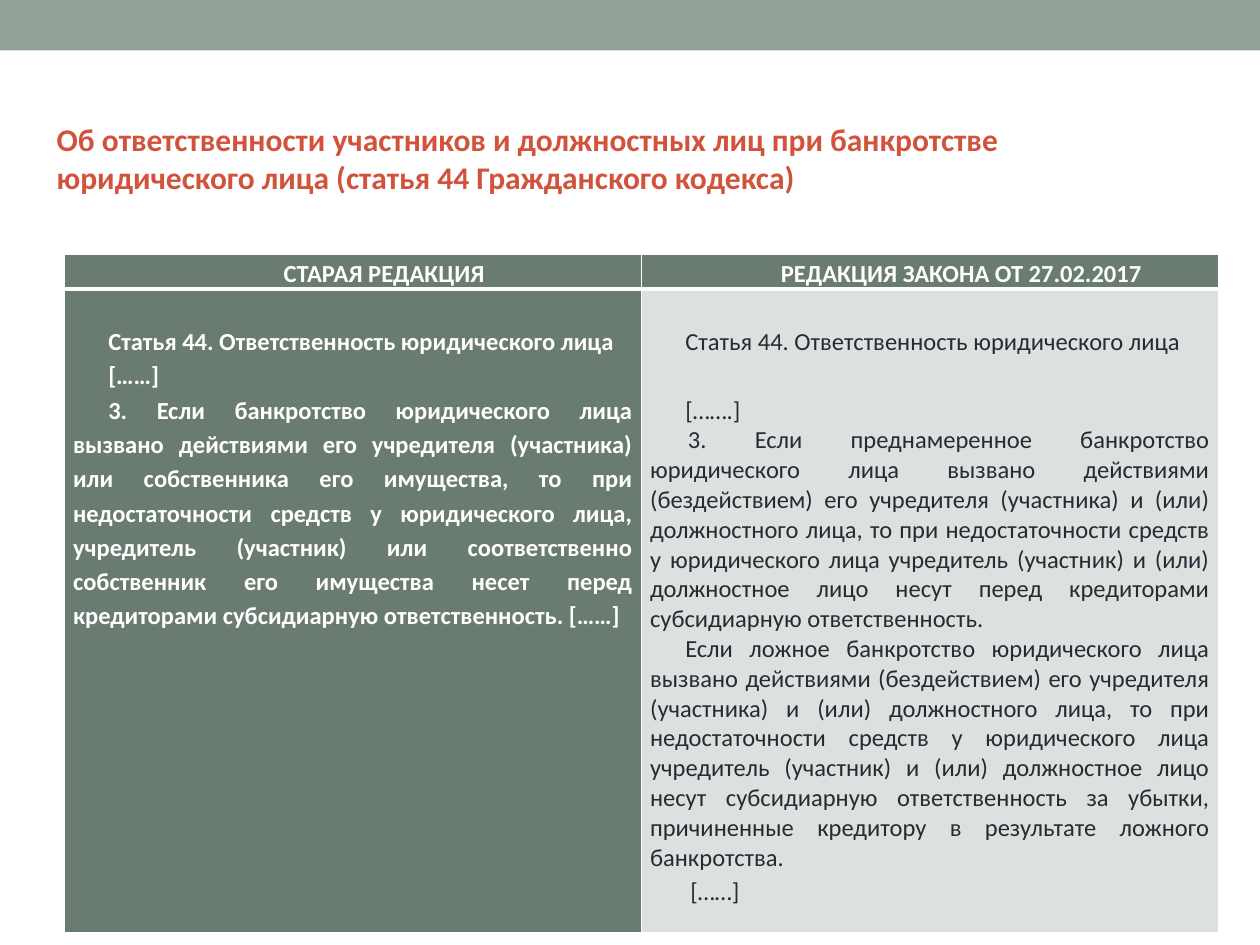
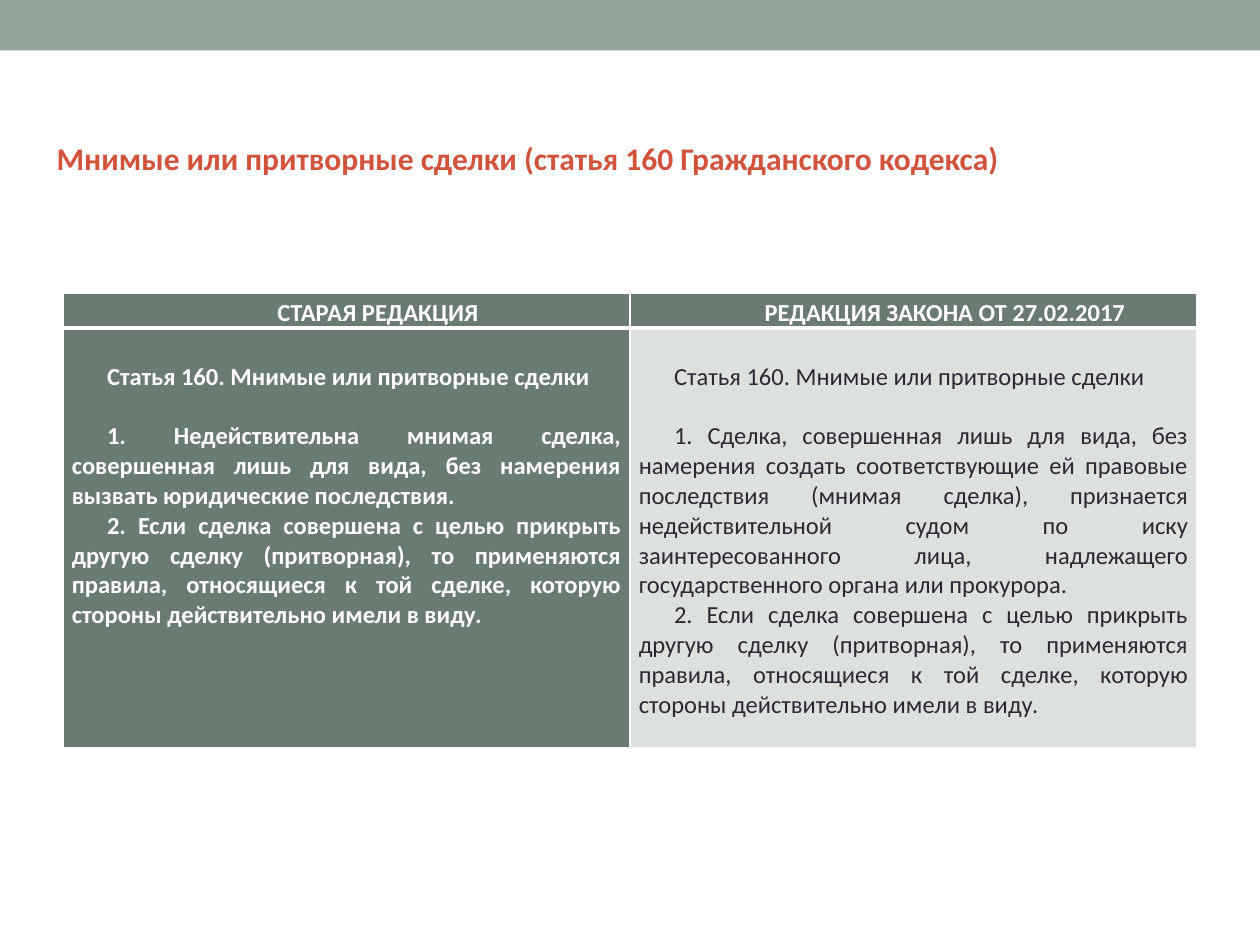
from pptx import Presentation
from pptx.dml.color import RGBColor
from pptx.enum.shapes import MSO_SHAPE
from pptx.enum.text import MSO_ANCHOR, MSO_AUTO_SIZE, PP_ALIGN
from pptx.oxml.ns import qn
from pptx.util import Inches, Pt
from lxml import etree

RECT = MSO_SHAPE.RECTANGLE
TOP, MIDDLE = MSO_ANCHOR.TOP, MSO_ANCHOR.MIDDLE
NO_FIT = MSO_AUTO_SIZE.NONE
LEFT, CENTER, JUSTIFY = PP_ALIGN.LEFT, PP_ALIGN.CENTER, PP_ALIGN.JUSTIFY

FONT = "Calibri"
COLORS = {"band": "93A299", "title": "D2533C", "dark": "6A7C71",
          "pale": "DCE0DE", "text": "292934", "white": "FFFFFF"}
LOOSE = 1.15
INDENT = 0.28
HEAD_HEIGHT = 0.27
HEADS = ["СТАРАЯ РЕДАКЦИЯ", "РЕДАКЦИЯ ЗАКОНА ОТ 27.02.2017"]

SHAM_HEAD = "Статья 160. Мнимые или притворные сделки"
SHAM_RULE = ("2. Если сделка совершена с целью прикрыть другую сделку (притворная), "
             "то применяются правила, относящиеся к той сделке, которую стороны "
             "действительно имели в виду.")
DEBT_HEAD = "Статья 44. Ответственность юридического лица"

# Each body paragraph: text, then any of spacing, gap (points), indent (inches).
DEBT_OLD = [
    (DEBT_HEAD, {"spacing": LOOSE}),
    ("[……]", {"spacing": LOOSE}),
    ("3. Если банкротство юридического лица вызвано действиями его учредителя "
     "(участника) или собственника его имущества, то при недостаточности средств "
     "у юридического лица, учредитель (участник) или соответственно собственник "
     "его имущества несет перед кредиторами субсидиарную ответственность. [……]",
     {"spacing": LOOSE}),
]
DEBT_NEW = [
    (DEBT_HEAD, {"spacing": LOOSE}),
    ("[…….]", {"spacing": LOOSE, "gap": 19.5}),
    ("3. Если преднамеренное банкротство юридического лица вызвано действиями "
     "(бездействием) его учредителя (участника) и (или) должностного лица, то при "
     "недостаточности средств у юридического лица учредитель (участник) и (или) "
     "должностное лицо несут перед кредиторами субсидиарную ответственность.",
     {"indent": 0.3}),
    ("Если ложное банкротство юридического лица вызвано действиями (бездействием) "
     "его учредителя (участника) и (или) должностного лица, то при недостаточности "
     "средств у юридического лица учредитель (участник) и (или) должностное лицо "
     "несут субсидиарную ответственность за убытки, причиненные кредитору в "
     "результате ложного банкротства.", {}),
    ("[……]", {"spacing": LOOSE, "indent": 0.32}),
]
SHAM_OLD = [
    (SHAM_HEAD, {}),
    ("1. Недействительна мнимая сделка, совершенная лишь для вида, без намерения "
     "вызвать юридические последствия.", {"gap": 17}),
    (SHAM_RULE, {}),
]
SHAM_NEW = [
    (SHAM_HEAD, {}),
    ("1. Сделка, совершенная лишь для вида, без намерения создать соответствующие "
     "ей правовые последствия (мнимая сделка), признается недействительной судом "
     "по иску заинтересованного лица, надлежащего государственного органа или "
     "прокурора.", {"gap": 17}),
    (SHAM_RULE, {}),
]


def rgb(name):
    return RGBColor.from_string(COLORS[name])


def paint(item, color):
    item.fill.solid()
    item.fill.fore_color.rgb = rgb(color)


def style(para, size, color, bold):
    font = para.font
    font.name, font.size, font.bold = FONT, Pt(size), bold
    font.color.rgb = rgb(color)


def indent(para, margin, first):
    props = para._p.get_or_add_pPr()
    props.set("marL", str(Inches(margin)))
    props.set("indent", str(Inches(first)))


def add_band(slide):
    band = slide.shapes.add_shape(RECT, 0, 0, Inches(10), Inches(0.4))
    band.shadow.inherit = False
    paint(band, "band")
    band.line.fill.background()


def set_title(slide, text, box):
    title = slide.shapes.title
    title.left, title.top, title.width, title.height = map(Inches, box)
    paint(title, "white")
    frame = title.text_frame
    frame.text = text
    frame.word_wrap = True
    frame.auto_size = NO_FIT
    frame.vertical_anchor = MIDDLE
    frame.margin_left = Inches(0.1)
    frame.margin_right = Inches(0.15)
    frame.margin_top = Inches(0.05)
    frame.margin_bottom = Inches(0.35)
    para = frame.paragraphs[0]
    para.alignment = LEFT
    style(para, 18, "title", True)


def add_edges(cell, widths):
    """Draw white borders; widths are points for left, right, top, bottom."""
    props = cell._tc.get_or_add_tcPr()
    for side, width in zip("LRTB", widths):
        line = etree.SubElement(props, qn(f"a:ln{side}"), w=str(Pt(width)))
        fill = etree.SubElement(line, qn("a:solidFill"))
        etree.SubElement(fill, qn("a:srgbClr"), val=COLORS["white"])


def format_cell(cell, fill, edges, top):
    add_edges(cell, edges)
    paint(cell, fill)
    cell.margin_left = cell.margin_right = Inches(0.07)
    cell.margin_top, cell.margin_bottom = Inches(top), 0
    cell.vertical_anchor = TOP


def fill_head(cell, text):
    format_cell(cell, "dark", (1, 1, 1, 3), 0)
    cell.text = text
    para = cell.text_frame.paragraphs[0]
    para.alignment = CENTER
    para.line_spacing = LOOSE
    indent(para, 0.5, 0)
    style(para, 14, "white", True)


def fill_body(cell, items, fill, color, bold):
    format_cell(cell, fill, (1, 1, 3, 1), 0.27)
    frame = cell.text_frame
    for num, (text, opts) in enumerate(items):
        para = frame.add_paragraph() if num else frame.paragraphs[0]
        para.text = text
        para.alignment = JUSTIFY
        para.line_spacing = opts.get("spacing", 1.0)
        para.space_before = Pt(opts.get("gap", 0))
        indent(para, 0, opts.get("indent", INDENT))
        style(para, 14, color, bold)


def add_table(slide, box, old, new):
    left, top, width, height = box
    table = slide.shapes.add_table(2, 2, *map(Inches, box)).table
    for col in table.columns:
        col.width = Inches(width / 2)
    table.rows[0].height = Inches(HEAD_HEIGHT)
    table.rows[1].height = Inches(height - HEAD_HEIGHT)
    for num, text in enumerate(HEADS):
        fill_head(table.cell(0, num), text)
    fill_body(table.cell(1, 0), old, "dark", "white", True)
    fill_body(table.cell(1, 1), new, "pale", "text", False)


def add_page(deck, title, title_box, table_box, old, new):
    slide = deck.slides.add_slide(deck.slide_layouts[5])
    add_band(slide)
    set_title(slide, title, title_box)
    add_table(slide, table_box, old, new)


def main():
    deck = Presentation()
    deck.slide_width, deck.slide_height = Inches(10), Inches(7.5)
    add_page(deck,
             "Об ответственности участников и должностных лиц при банкротстве "
             "юридического лица (статья 44 Гражданского кодекса)",
             (0.35, 0.9, 9.29, 1.01), (0.51, 2.02, 9.16, 5.38), DEBT_OLD, DEBT_NEW)
    add_page(deck, "Мнимые или притворные сделки (статья 160 Гражданского кодекса)",
             (0.35, 1.05, 9.53, 0.71), (0.5, 2.33, 9, 3.6), SHAM_OLD, SHAM_NEW)
    deck.save("out.pptx")


if __name__ == "__main__":
    main()
